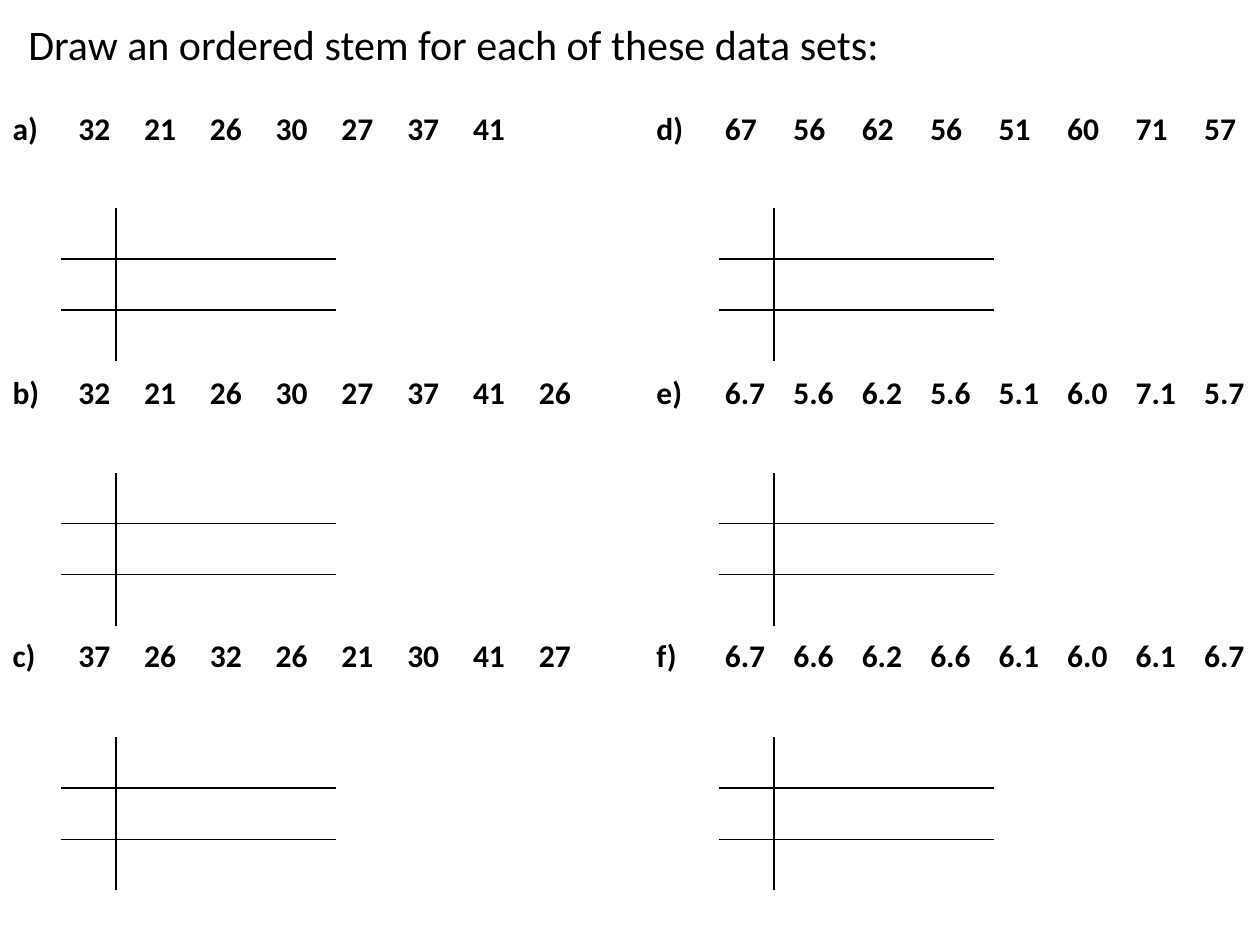
from lxml import etree
from pptx import Presentation
from pptx.dml.color import RGBColor
from pptx.enum.text import MSO_ANCHOR, PP_ALIGN
from pptx.oxml.ns import qn
from pptx.util import Pt

TOP, MIDDLE = MSO_ANCHOR.TOP, MSO_ANCHOR.MIDDLE
LEFT = PP_ALIGN.LEFT
BLACK = RGBColor(0x00, 0x00, 0x00)
FONT = "Calibri"
NO_STYLE_NO_GRID = "{2D5ABB26-0587-4C30-8999-92F81FD0307C}"

# Content: one entry per column of exercises
HEADING = "Draw an ordered stem for each of these data sets:"
EXERCISE_COLUMNS = [
    {"left": 0, "cell_width": 37.6, "stem_left": 34.8, "data_sets": [
        "a) 32 21 26 30 27 37 41",
        "b) 32 21 26 30 27 37 41 26",
        "c) 37 26 32 26 21 30 41 27"]},
    {"left": 367.9, "cell_width": 39.12, "stem_left": 410.9, "data_sets": [
        "d) 67 56 62 56 51 60 71 57",
        "e) 6.7 5.6 6.2 5.6 5.1 6.0 7.1 5.7",
        "f) 6.7 6.6 6.2 6.6 6.1 6.0 6.1 6.7"]},
]

# Layout in points
DATA_TOP, DATA_ROW, DATA_CELLS = 59.8, 150.5, 9
STEM_TOP, STEM_PITCH = 118.8, 151.2
STEM_WIDTHS, STEM_ROW, STEM_ROWS = (31.4, 125.6), 29.2, 3


def write(frame, text, size=18, bold=False):
    paragraph = frame.paragraphs[0]
    paragraph.alignment = LEFT
    run = paragraph.add_run()
    run.text = text
    run.font.name = FONT
    run.font.size = Pt(size)
    run.font.bold = bold
    run.font.color.rgb = BLACK


def add_plain_table(left, top, widths, row_height, row_count):
    frame = slide.shapes.add_table(
        row_count, len(widths), Pt(left), Pt(top),
        Pt(sum(widths)), Pt(row_height * row_count))
    table = frame.table
    table.first_row = table.horz_banding = False
    table._tbl.tblPr.find(qn("a:tableStyleId")).text = NO_STYLE_NO_GRID
    for column, width in zip(table.columns, widths):
        column.width = Pt(width)
    for row in table.rows:
        row.height = Pt(row_height)
    for cell in table.iter_cells():
        cell.fill.background()
    return table


def add_borders(cell, sides):
    """Draw 1 pt lines on the given sides, listed in the order L, R, T, B."""
    properties = cell._tc.get_or_add_tcPr()
    for position, side in enumerate(sides):
        line = etree.Element(qn(f"a:ln{side}"), w=str(Pt(1)))
        fill = etree.SubElement(line, qn("a:solidFill"))
        etree.SubElement(fill, qn("a:srgbClr"), val=str(BLACK))
        properties.insert(position, line)


def add_data_table(left, cell_width, data_sets):
    table = add_plain_table(left, DATA_TOP, [cell_width] * DATA_CELLS,
                            DATA_ROW, len(data_sets))
    for row, data_set in enumerate(data_sets):
        for column, entry in enumerate(data_set.split()):
            write(table.cell(row, column).text_frame, entry, bold=True)


def add_stem(left, top):
    table = add_plain_table(left, top, STEM_WIDTHS, STEM_ROW, STEM_ROWS)
    for row in range(STEM_ROWS):
        across = ("T" if row > 0 else "") + ("B" if row < STEM_ROWS - 1 else "")
        for column, upright in enumerate("RL"):
            add_borders(table.cell(row, column), upright + across)


prs = Presentation()
prs.slide_width, prs.slide_height = Pt(720), Pt(540)
slide = prs.slides.add_slide(prs.slide_layouts[5])

# Heading
heading = slide.shapes.title
heading.left, heading.top = Pt(9), Pt(6.8)
heading.width, heading.height = Pt(526), Pt(36.4)
heading.text_frame.word_wrap = True
heading.text_frame.vertical_anchor = TOP
write(heading.text_frame, HEADING, size=24)

# Data sets, then the blank stem diagrams below each of them
for exercises in EXERCISE_COLUMNS:
    add_data_table(exercises["left"], exercises["cell_width"],
                   exercises["data_sets"])
for exercises in EXERCISE_COLUMNS:
    for index in range(len(exercises["data_sets"])):
        add_stem(exercises["stem_left"], STEM_TOP + index * STEM_PITCH)

prs.save("out.pptx")
